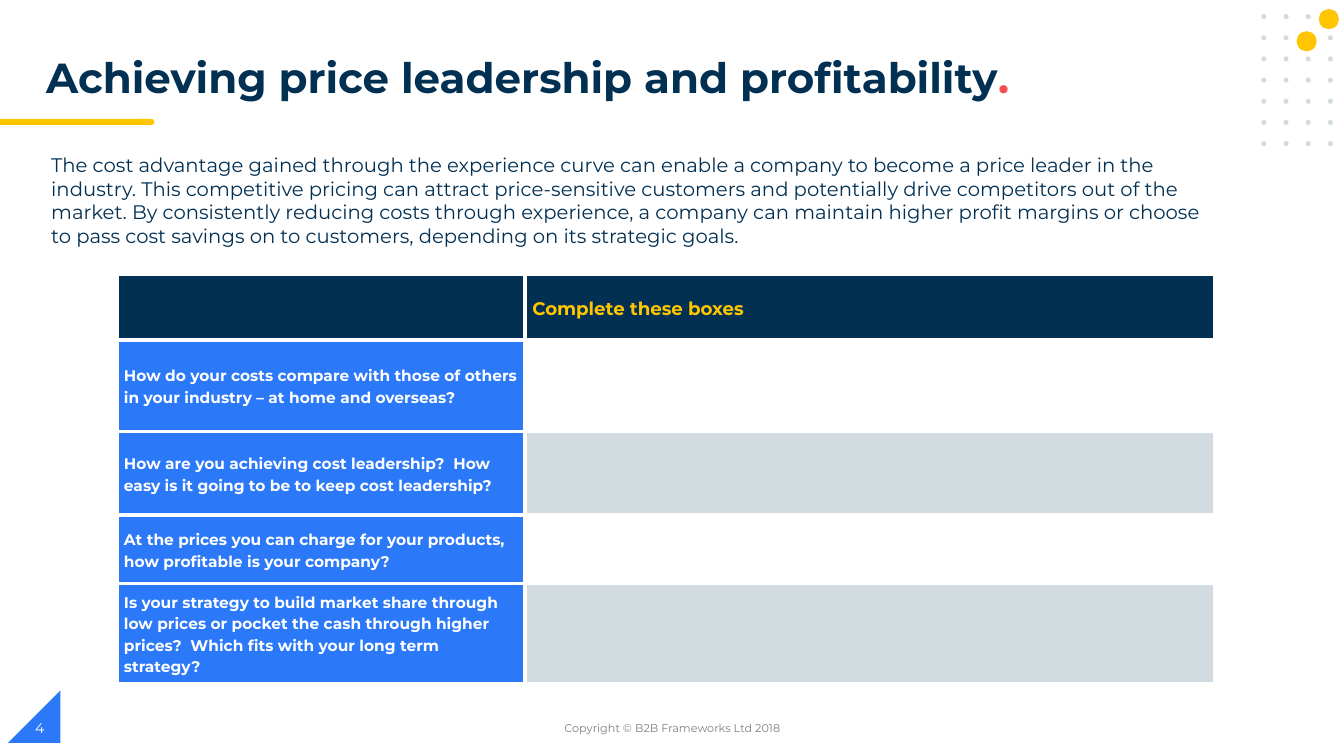
import pptx
import pptx.util
import pptx.dml.color
import pptx.enum.shapes
import pptx.enum.text
import pptx.oxml
import pptx.oxml.ns

Inches = pptx.util.Inches
SHAPE = pptx.enum.shapes.MSO_SHAPE
ALIGN = pptx.enum.text.PP_ALIGN
ANCHOR = pptx.enum.text.MSO_ANCHOR
COLORS = {
    "navy": "023053",
    "blue": "2B79F8",
    "yellow": "FFC600",
    "red": "F24E4E",
    "mist": "D1DBE0",
    "gray": "7F7F7F",
    "white": "FFFFFF",
}

deck = pptx.Presentation()
deck.slide_width = Inches(13.33)
deck.slide_height = Inches(7.5)
page = deck.slides.add_slide(deck.slide_layouts[6])


def write(para, text, size=14, color="navy", bold=False, align=ALIGN.LEFT, spacing=1.0):
    para.alignment = align
    para.line_spacing = spacing
    span = para.add_run()
    span.text = text
    span.font.name = "Montserrat"
    span.font.size = pptx.util.Pt(size)
    span.font.bold = bold
    span.font.color.rgb = pptx.dml.color.RGBColor.from_string(COLORS[color])


def draw(kind, left, top, width, height, color):
    shape = page.shapes.add_shape(kind, Inches(left), Inches(top), Inches(width), Inches(height))
    shape.shadow.inherit = False
    shape.fill.solid()
    shape.fill.fore_color.rgb = pptx.dml.color.RGBColor.from_string(COLORS[color])
    shape.line.fill.background()
    return shape


corner = draw(SHAPE.RIGHT_TRIANGLE, 0.08, 6.85, 0.52, 0.52, "blue")
corner.rotation = 270
draw(SHAPE.FLOWCHART_TERMINATOR, 1.34, 1.18, 0.19, 0.06, "yellow")
draw(SHAPE.RECTANGLE, 0, 1.18, 1.41, 0.06, "yellow")

for row in range(7):
    for column in range(4):
        draw(SHAPE.OVAL, 12.51 + 0.22 * column, 0.14 + 0.21 * row, 0.05, 0.05, "mist")
for left, top in [(13.08, 0.09), (12.86, 0.31)]:
    draw(SHAPE.OVAL, left, top, 0.2, 0.2, "yellow")

intro = (
    "The cost advantage gained through the experience curve can enable a company to become "
    "a price leader in the industry. This competitive pricing can attract price-sensitive "
    "customers and potentially drive competitors out of the market. By consistently reducing "
    "costs through experience, a company can maintain higher profit margins or choose to pass "
    "cost savings on to customers, depending on its strategic goals."
)
title_format = {"size": 30, "bold": True, "spacing": 0.9}
text_boxes = [
    (4.42, 7.02, 4.5, 0.4, ANCHOR.MIDDLE,
     [("Copyright © B2B Frameworks Ltd 2018", {"size": 8, "color": "gray", "align": ALIGN.CENTER})]),
    (0.25, 7.02, 3, 0.4, ANCHOR.MIDDLE, [("4", {"size": 10, "color": "white"})]),
    (0.36, 0.52, 10.47, 0.6, ANCHOR.TOP,
     [("Achieving price leadership and profitability", title_format),
      (".", {**title_format, "color": "red"})]),
    (0.41, 1.47, 11.73, 1.04, ANCHOR.TOP, [(intro, {})]),
]
for left, top, width, height, anchor, spans in text_boxes:
    box = page.shapes.add_textbox(Inches(left), Inches(top), Inches(width), Inches(height))
    box.text_frame.word_wrap = True
    box.text_frame.vertical_anchor = anchor
    for text, text_format in spans:
        write(box.text_frame.paragraphs[0], text, **text_format)

rows = [
    (0.65, "", "navy", "Complete these boxes", "navy"),
    (0.91, "How do your costs compare with those of others in your industry – at home and overseas?",
     "blue", "", "white"),
    (0.83, "How are you achieving cost leadership?  How easy is it going to be to keep cost leadership?",
     "blue", "", "mist"),
    (0.68, "At the prices you can charge for your products, how profitable is your company?",
     "blue", "", "white"),
    (0.99, "Is your strategy to build market share through low prices or pocket the cash through "
     "higher prices?  Which fits with your long term strategy?", "blue", "", "mist"),
]
column_widths = [4.05, 6.84]
table = page.shapes.add_table(
    len(rows), len(column_widths), Inches(1.16), Inches(2.72),
    Inches(sum(column_widths)), Inches(sum(row[0] for row in rows)),
).table
table.first_row = False
table.horz_banding = False
for column, width in zip(table.columns, column_widths):
    column.width = Inches(width)

for index, (height, question, question_fill, answer, answer_fill) in enumerate(rows):
    table.rows[index].height = Inches(height)
    for column, (text, fill) in enumerate([(question, question_fill), (answer, answer_fill)]):
        cell = table.cell(index, column)
        cell.vertical_anchor = ANCHOR.MIDDLE
        cell.margin_left = cell.margin_right = Inches(0.07)
        cell.margin_top = cell.margin_bottom = 0
        properties = cell._tc.get_or_add_tcPr()
        for side in ("lnL", "lnR", "lnT", "lnB"):
            properties.append(pptx.oxml.parse_xml(
                f'<a:{side} {pptx.oxml.ns.nsdecls("a")} w="{pptx.util.Pt(3)}"><a:solidFill>'
                f'<a:srgbClr val="{COLORS["white"]}"/></a:solidFill></a:{side}>'
            ))
        cell.fill.solid()
        cell.fill.fore_color.rgb = pptx.dml.color.RGBColor.from_string(COLORS[fill])
        if text:
            write(cell.text_frame.paragraphs[0], text, size=11 if index else 13,
                  color="white" if index else "yellow", bold=True, spacing=1.15)

deck.save("out.pptx")
